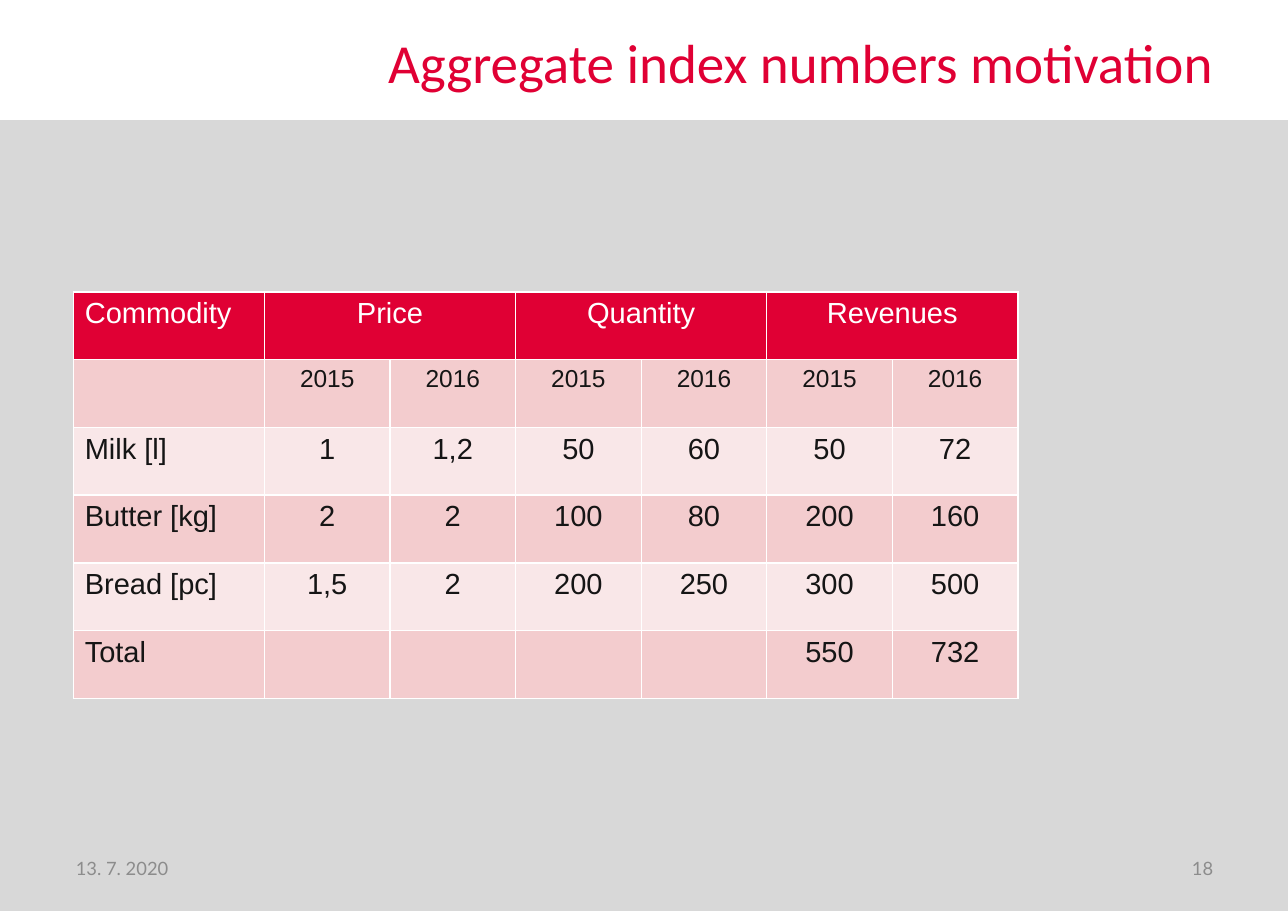
"""Build the slide that motivates aggregate index numbers with a price table."""
from dataclasses import dataclass

from lxml.etree import SubElement
from pptx import Presentation
from pptx.dml.color import RGBColor as Rgb
from pptx.enum.shapes import MSO_SHAPE as Shape
from pptx.enum.text import MSO_ANCHOR as Anchor, PP_ALIGN as Align
from pptx.oxml.ns import qn
from pptx.util import Inches, Pt

TITLE = "Aggregate index numbers motivation"
FOOTER = [("13. 7. 2020", 0.59, Align.LEFT), ("18", 8.38, Align.RIGHT)]
ROWS = [
    ("Commodity", "Price", "", "Quantity", "", "Revenues", ""),
    ("",) + ("2015", "2016") * 3,
    ("Milk [l]", "1", "1,2", "50", "60", "50", "72"),
    ("Butter [kg]", "2", "2", "100", "80", "200", "160"),
    ("Bread [pc]", "1,5", "2", "200", "250", "300", "500"),
    ("Total", "", "", "", "", "550", "732"),
]
WIDTHS = [1.73] + [1.14] * 6
HEIGHT = 0.615


@dataclass(frozen=True)
class Theme:
    """Colours, fonts and type sizes of the slide."""
    red: str = "E00034"
    panel: str = "D8D8D8"
    dark: str = "F3CCCE"
    light: str = "F9E7E8"
    ink: str = "151515"
    white: str = "FFFFFF"
    muted: str = "8C8C8C"
    head: str = "Calibri"
    body: str = "Arial"
    foot: str = "Lato"
    big: int = 36
    cell: int = 19
    year: int = 16
    small: int = 12


T = Theme()


def box(*sizes):
    """Turn numbers into inches."""
    return [Inches(size) for size in sizes]


def style(para, face, size, color, align):
    """Set the font and alignment of a paragraph."""
    para.alignment = align
    para.font.name = face
    para.font.size = Pt(size)
    para.font.color.rgb = Rgb.from_string(color)


def border(cell):
    """Draw thin white lines on all four sides of a cell."""
    props = cell._tc.get_or_add_tcPr()
    for side in ("a:lnL", "a:lnR", "a:lnT", "a:lnB"):
        line = SubElement(props, qn(side), w=str(Pt(1)))
        fill = SubElement(line, qn("a:solidFill"))
        SubElement(fill, qn("a:srgbClr"), val=T.white)


def add_title(slide):
    """Place the title at the upper right."""
    title = slide.shapes.title
    title.left, title.top, title.width, title.height = box(2.99, 0.2, 8.12, 0.72)
    frame = title.text_frame
    frame.text = TITLE
    frame.vertical_anchor = Anchor.MIDDLE
    style(frame.paragraphs[0], T.head, T.big, T.red, Align.RIGHT)


def add_panel(slide):
    """Add the grey panel below the title."""
    panel = slide.shapes.add_shape(Shape.RECTANGLE, *box(0, 1.09, 11.69, 7.18))
    panel.shadow.inherit = False
    panel.fill.solid()
    panel.fill.fore_color.rgb = Rgb.from_string(T.panel)
    panel.line.fill.background()


def add_table(slide):
    """Add the commodity table with paired year columns."""
    place = box(0.67, 2.65, sum(WIDTHS), HEIGHT * len(ROWS))
    table = slide.shapes.add_table(len(ROWS), len(WIDTHS), *place).table
    for col, width in zip(table.columns, WIDTHS):
        col.width = Inches(width)
    for r, row in enumerate(ROWS):
        table.rows[r].height = Inches(HEIGHT)
        back = T.red if r == 0 else T.dark if r % 2 else T.light
        color = T.white if r == 0 else T.ink
        size = T.year if r == 1 else T.cell
        for c, text in enumerate(row):
            cell = table.cell(r, c)
            cell.text = text
            border(cell)
            cell.fill.solid()
            cell.fill.fore_color.rgb = Rgb.from_string(back)
            align = Align.CENTER if c else Align.LEFT
            style(cell.text_frame.paragraphs[0], T.body, size, color, align)
    for c in range(1, len(WIDTHS), 2):
        table.cell(0, c).merge(table.cell(0, c + 1))


def add_footer(slide):
    """Add the date and the slide number."""
    for text, left, align in FOOTER:
        frame = slide.shapes.add_textbox(*box(left, 7.66, 2.73, 0.44)).text_frame
        frame.word_wrap = True
        frame.vertical_anchor = Anchor.MIDDLE
        frame.text = text
        style(frame.paragraphs[0], T.foot, T.small, T.muted, align)


def main():
    """Build and save the slide."""
    deck = Presentation()
    deck.slide_width, deck.slide_height = box(11.69, 8.27)
    slide = deck.slides.add_slide(deck.slide_layouts[5])
    add_panel(slide)
    add_title(slide)
    add_table(slide)
    add_footer(slide)
    deck.save("out.pptx")


if __name__ == "__main__":
    main()
